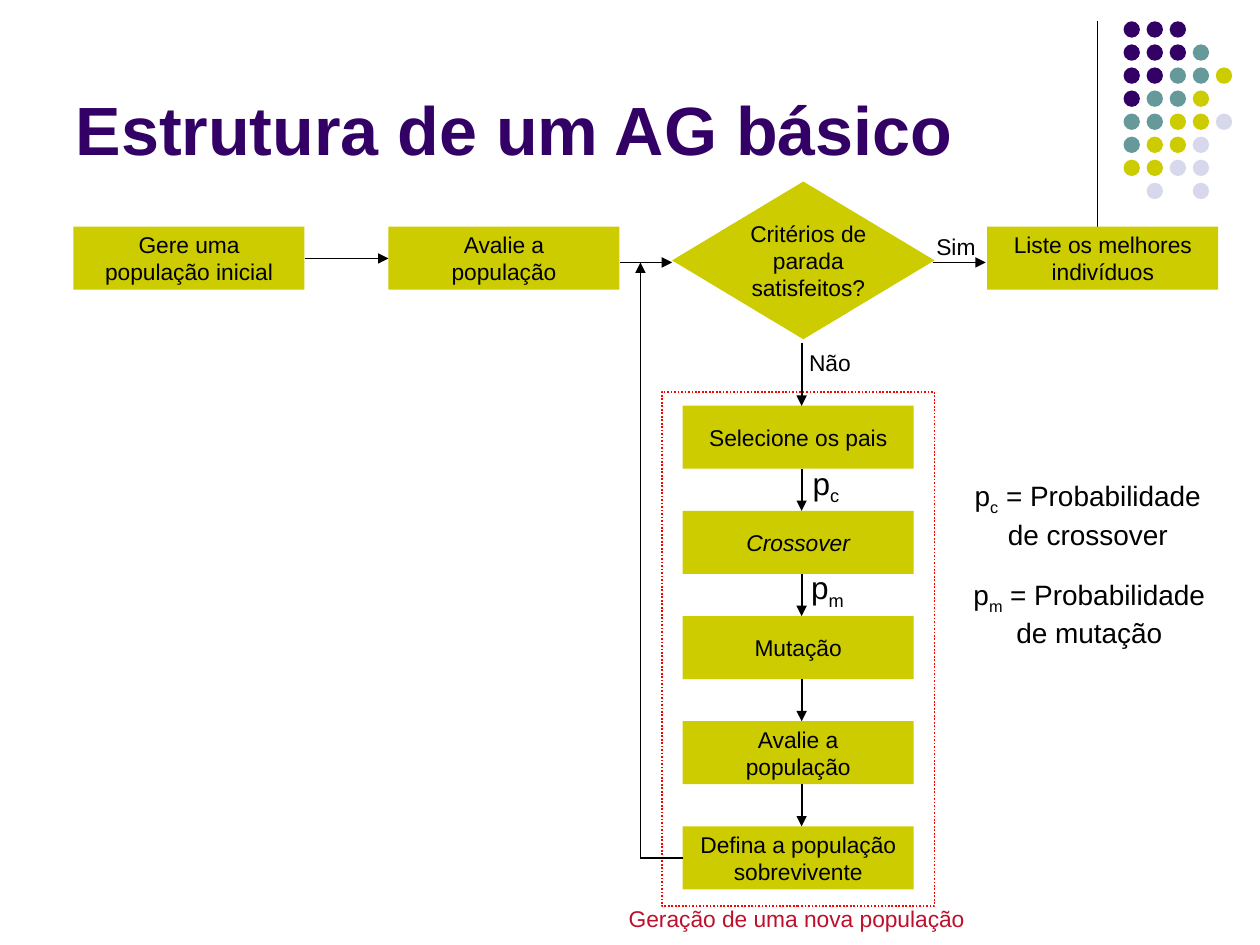
from lxml.etree import SubElement
from pptx import Presentation
from pptx.dml.color import RGBColor
from pptx.enum.dml import MSO_LINE
from pptx.enum.shapes import MSO_CONNECTOR, MSO_SHAPE
from pptx.enum.text import MSO_ANCHOR, MSO_AUTO_SIZE, PP_ALIGN
from pptx.oxml.ns import qn
from pptx.util import Cm, Pt

HUES = {"P": "330066", "T": "669999", "Y": "CCCC00", "L": "D8D8EC",
        "black": "000000", "red": "FF0000", "wine": "BC102D"}
DOTS = ["PPP", "PPPT", "PPTTY", "PTTY", "TTYYL", "TYYL", "YYLL", " L L"]
TITLE = "Estrutura de um AG básico"
TOP = [(1.48, "Gere uma população inicial"), (7.83, "Avalie a população"),
       (19.9, "Liste os melhores indivíduos")]
TEST = "Critérios de parada satisfeitos?"
STEPS = [("Selecione os pais", 0.46, False), ("Crossover", 0.46, True),
         ("Mutação", 0.46, False), ("Avalie a população", 0.46, False),
         ("Defina a população sobrevivente", 0.25, False)]
NOTES = [
    ((11.51, 18.11, 9.09, 0.81), ["Geração de uma nova população"], 13, "wine", True),
    ((15.88, 6.91, 1.7, 0.81), ["Não"], 13, "black", True),
    ((18.42, 4.57, 1.7, 0.81), ["Sim"], 13, "black", True),
    ((16.13, 9.22, 3.5, 1.02), ["p", "c"], 18, "black", False),
    ((16.1, 11.33, 3.5, 1.02), ["p", "m"], 18, "black", False),
    ((19.3, 9.53, 5.26, 1.63), ["p", "c", " = Probabilidade de crossover"], 16, "black", True),
    ((19.33, 11.51, 5.26, 1.63), ["p", "m", " = Probabilidade de mutação"], 16, "black", True),
]
WIDE, HIGH = 4.66, 1.27
COL, ROW, STEP = 13.76, 8.18, 2.12
MID, LOOP, FLOW = 16.16, 12.91, 5.29
BASE = ROW + 4 * STEP + HIGH / 2
ARROWS = [(6.14, 5.21, 7.83, 5.21), (12.49, FLOW, 13.55, FLOW),
          (18.8, FLOW, 19.87, FLOW), (MID, 6.91, MID, ROW),
          (LOOP, BASE, LOOP, FLOW)]
ARROWS += [(MID, ROW + i * STEP + HIGH, MID, ROW + (i + 1) * STEP)
           for i in range(4)]


def apply(item, **vals):
    for name, val in vals.items():
        setattr(item, name, val)


def rgb(hue):
    return RGBColor.from_string(HUES[hue])


def write(frame, parts, size, hue="black", mid=True, slant=None, bold=None):
    para = frame.paragraphs[0]
    para.alignment = PP_ALIGN.CENTER if mid else PP_ALIGN.LEFT
    for i, part in enumerate(parts):
        run = para.add_run()
        run.text = part
        apply(run.font, name="Arial", size=Pt(size), italic=slant, bold=bold)
        run.font.color.rgb = rgb(hue)
        if i == 1:
            run.font._element.set("baseline", "-25000")


def draw(slide, kind, spot, hue=None):
    shape = slide.shapes.add_shape(kind, *map(Cm, spot))
    shape.shadow.inherit = False
    shape.line.fill.background()
    if hue:
        shape.fill.solid()
        shape.fill.fore_color.rgb = rgb(hue)
    else:
        shape.fill.background()
    return shape


def box(slide, kind, spot, text, left, right, slant=None):
    frame = draw(slide, kind, spot, "Y").text_frame
    apply(frame, word_wrap=True, vertical_anchor=MSO_ANCHOR.MIDDLE,
          margin_left=Cm(left), margin_right=Cm(right),
          margin_top=0, margin_bottom=0)
    write(frame, [text], 13, slant=slant)


def link(slide, ends, width=1, head=True):
    line = slide.shapes.add_connector(MSO_CONNECTOR.STRAIGHT, *map(Cm, ends))
    line.line.width = Pt(width)
    line.line.color.rgb = rgb("black")
    if head:
        SubElement(line.line._get_or_add_ln(), qn("a:tailEnd"), type="triangle")
    SubElement(line._element.spPr, qn("a:effectLst"))


def main():
    deck = Presentation()
    apply(deck, slide_width=Cm(25.4), slide_height=Cm(19.05))
    slide = deck.slides.add_slide(deck.slide_layouts[5])

    title = slide.shapes.title
    apply(title, left=Cm(1.27), top=Cm(1.12), width=Cm(20.96), height=Cm(2.41))
    apply(title.text_frame, vertical_anchor=MSO_ANCHOR.BOTTOM,
          auto_size=MSO_AUTO_SIZE.NONE, word_wrap=True)
    write(title.text_frame, [TITLE], 39, "P", mid=False, bold=True)

    link(slide, (22.12, 0.43, 22.12, 4.65), 0.75, False)
    for i, row in enumerate(DOTS):
        for j, hue in enumerate(row):
            if hue != " ":
                spot = (22.65 + j * 0.465, 0.43 + i * 0.465, 0.33, 0.33)
                draw(slide, MSO_SHAPE.OVAL, spot, hue)

    for left, text in TOP:
        box(slide, MSO_SHAPE.RECTANGLE, (left, 4.57, WIDE, HIGH), text, 0.46, 0.46)
    box(slide, MSO_SHAPE.DIAMOND, (13.55, 3.66, 5.29, 3.18), TEST, 0.2, 0)
    for i, (text, pad, slant) in enumerate(STEPS):
        spot = (COL, ROW + i * STEP, WIDE, HIGH)
        box(slide, MSO_SHAPE.RECTANGLE, spot, text, pad, pad, slant)

    zone = draw(slide, MSO_SHAPE.RECTANGLE, (13.34, 7.9, 5.5, 10.37))
    zone.line.color.rgb = rgb("red")
    apply(zone.line, width=Pt(1), dash_style=MSO_LINE.ROUND_DOT)

    for ends in ARROWS:
        link(slide, ends)
    link(slide, (COL, BASE, LOOP, BASE), head=False)

    for spot, parts, size, hue, mid in NOTES:
        frame = slide.shapes.add_textbox(*map(Cm, spot)).text_frame
        frame.word_wrap = True
        write(frame, parts, size, hue, mid)

    deck.save("out.pptx")


if __name__ == "__main__":
    main()
